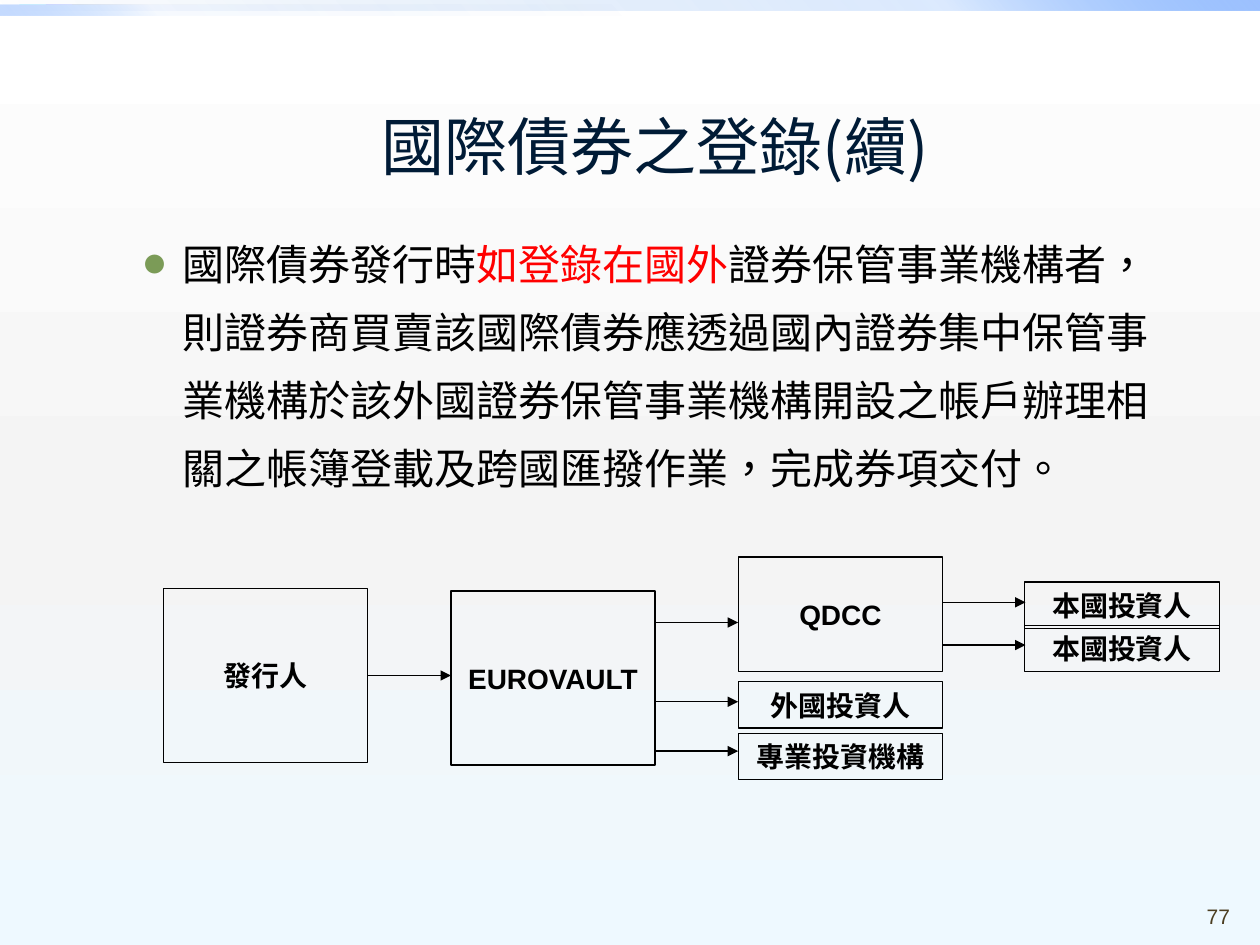
"""Build the slide on registering international bonds abroad."""
from typing import NamedTuple

from lxml import etree
from pptx import Presentation
from pptx.dml.color import RGBColor
from pptx.enum.shapes import MSO_CONNECTOR, MSO_SHAPE
from pptx.enum.text import MSO_ANCHOR, PP_ALIGN
from pptx.oxml.ns import qn
from pptx.util import Pt

CENTER = PP_ALIGN.CENTER
MIDDLE = MSO_ANCHOR.MIDDLE
BOTTOM = MSO_ANCHOR.BOTTOM
RECTANGLE = MSO_SHAPE.RECTANGLE
STRAIGHT = MSO_CONNECTOR.STRAIGHT

BLACK = RGBColor(0x00, 0x00, 0x00)
RED = RGBColor(0xFF, 0x00, 0x00)
NAVY = RGBColor(0x00, 0x1B, 0x36)
BROWN = RGBColor(0x4B, 0x3E, 0x21)
GREEN = RGBColor(0x7B, 0x9B, 0x57)
WHITE = RGBColor(0xFF, 0xFF, 0xFF)
PALE_GRAY = RGBColor(0xF4, 0xF4, 0xF4)
PALE_BLUE = RGBColor(0xEE, 0xF9, 0xFF)
DEEP_BLUE = RGBColor(0x00, 0x58, 0xB7)
MID_BLUE = RGBColor(0x4F, 0x95, 0xFF)
LIGHT_BLUE = RGBColor(0x9E, 0xC2, 0xFF)

LATIN = "Arial"
CJK = "Noto Sans CJK SC"


class Stop(NamedTuple):
    position: int
    color: RGBColor
    opacity: int = 100


class Band(NamedTuple):
    top: float
    width: float
    angle: int
    stops: tuple[Stop, ...]


class Party(NamedTuple):
    name: str
    left: float
    top: float
    width: float
    height: float


class Flow(NamedTuple):
    left: float
    y: float


COLUMNS = (93.6, 257.7, 421.9, 585.4)
PARTY_WIDTH = 116.6
INVESTOR_WIDTH = 111.6
MAIN_HEIGHT = 99.4
ROW_HEIGHT = 26.6
FLOW_LENGTH = 47.5

BACKGROUND = (Stop(0, WHITE), Stop(55, PALE_GRAY), Stop(100, PALE_BLUE))
BANDS = (
    Band(0, 720, 315, (Stop(0, DEEP_BLUE, 0), Stop(75, MID_BLUE, 20), Stop(100, LIGHT_BLUE))),
    Band(2.9, 360, 135, (Stop(0, DEEP_BLUE, 0), Stop(75, MID_BLUE, 5), Stop(100, LIGHT_BLUE, 60))),
)
PARTIES = (
    Party("發行人", COLUMNS[0], 336.2, PARTY_WIDTH, MAIN_HEIGHT),
    Party("EUROVAULT", COLUMNS[1], 337.7, PARTY_WIDTH, MAIN_HEIGHT),
    Party("QDCC", COLUMNS[2], 318.4, PARTY_WIDTH, 65.2),
    Party("外國投資人", COLUMNS[2], 389.5, PARTY_WIDTH, ROW_HEIGHT),
    Party("專業投資機構", COLUMNS[2], 419, PARTY_WIDTH, ROW_HEIGHT),
    Party("本國投資人", COLUMNS[3], 332.6, INVESTOR_WIDTH, ROW_HEIGHT),
    Party("本國投資人", COLUMNS[3], 357.3, INVESTOR_WIDTH, ROW_HEIGHT),
)
FLOWS = (
    Flow(210.2, 386),
    Flow(374.3, 355.7), Flow(374.3, 401), Flow(374.3, 429.2),
    Flow(538.5, 344.2), Flow(538.5, 368.6),
)
RULE_TEXT = (
    ("國際債券發行時", BLACK),
    ("如登錄在國外", RED),
    ("證券保管事業機構者，則證券商買賣該國際債券應透過國內證券集中保管事業機構於"
     "該外國證券保管事業機構開設之帳戶辦理相關之帳簿登載及跨國匯撥作業，完成券項交付。", BLACK),
)


def set_gradient(fill, owner, stops: tuple[Stop, ...], angle: int) -> None:
    """Fill the owner element with a linear gradient."""
    fill.gradient()
    gradient = next(owner.iter(qn("a:gradFill")))
    stop_list = gradient.find(qn("a:gsLst"))
    for old in list(stop_list):
        stop_list.remove(old)
    for stop in stops:
        mark = etree.SubElement(stop_list, qn("a:gs"), pos=str(stop.position * 1000))
        color = etree.SubElement(mark, qn("a:srgbClr"), val=str(stop.color))
        if stop.opacity < 100:
            etree.SubElement(color, qn("a:alpha"), val=str(stop.opacity * 1000))
    gradient.find(qn("a:lin")).set("ang", str(angle * 60000))


def style_run(run, size: float, color: RGBColor, typeface: str, bold: bool = False) -> None:
    """Set the look of a run, with the CJK face for its Chinese characters."""
    font = run.font
    font.size, font.bold, font.name = Pt(size), bold, typeface
    font.color.rgb = color
    properties = run._r.get_or_add_rPr()
    properties.set("lang", "zh-TW")
    etree.SubElement(properties, qn("a:ea"), typeface=CJK)


def write_centered(frame, text: str, size: float, color: RGBColor, typeface: str,
                   anchor=MIDDLE, bold: bool = False) -> None:
    """Write one centred line into a text frame."""
    frame.text = text
    frame.word_wrap = True
    frame.vertical_anchor = anchor
    line = frame.paragraphs[0]
    line.alignment = CENTER
    style_run(line.runs[0], size, color, typeface, bold)


def draw_band(slide, band: Band) -> None:
    """Draw a coloured band along the top edge."""
    bar = slide.shapes.add_shape(RECTANGLE, Pt(0), Pt(band.top), Pt(band.width), Pt(5.8))
    bar.shadow.inherit = False
    bar.line.fill.background()
    set_gradient(bar.fill, bar._element, band.stops, band.angle)


def draw_party(slide, party: Party) -> None:
    """Draw one party of the settlement chain."""
    box = slide.shapes.add_shape(RECTANGLE, Pt(party.left), Pt(party.top),
                                 Pt(party.width), Pt(party.height))
    box.shadow.inherit = False
    box.fill.background()
    box.line.color.rgb = BLACK
    box.line.width = Pt(0.75)
    frame = box.text_frame
    frame.margin_left = frame.margin_right = Pt(0)
    frame.margin_top = frame.margin_bottom = Pt(0)
    write_centered(frame, party.name, 16, BLACK, LATIN, bold=True)


def draw_flow(slide, flow: Flow) -> None:
    """Draw an arrow from one party to the next."""
    arrow = slide.shapes.add_connector(STRAIGHT, Pt(flow.left), Pt(flow.y),
                                       Pt(flow.left + FLOW_LENGTH), Pt(flow.y))
    arrow.line.color.rgb = BLACK
    arrow.line.width = Pt(0.75)
    etree.SubElement(arrow.line._get_or_add_ln(), qn("a:tailEnd"), type="triangle")
    etree.SubElement(arrow._element.spPr, qn("a:effectLst"))


def write_rule(slide) -> None:
    """Write the bulleted rule above the diagram."""
    rule = slide.shapes.add_textbox(Pt(48.2), Pt(122.4), Pt(618.5), Pt(164.2))
    rule.text_frame.word_wrap = True
    paragraph = rule.text_frame.paragraphs[0]
    paragraph.line_spacing = 1.35
    properties = paragraph._p.get_or_add_pPr()
    properties.set("marL", str(Pt(49)))
    properties.set("indent", str(-Pt(21.6)))
    bullet_color = etree.SubElement(properties, qn("a:buClr"))
    etree.SubElement(bullet_color, qn("a:srgbClr"), val=str(GREEN))
    etree.SubElement(properties, qn("a:buSzPct"), val="50000")
    etree.SubElement(properties, qn("a:buFont"), typeface=CJK)
    etree.SubElement(properties, qn("a:buChar"), char="●")
    for text, color in RULE_TEXT:
        run = paragraph.add_run()
        run.text = text
        style_run(run, 24, color, CJK)


def main() -> None:
    """Build and save the slide."""
    deck = Presentation()
    deck.slide_width, deck.slide_height = Pt(720), Pt(540)
    slide = deck.slides.add_slide(deck.slide_layouts[5])
    set_gradient(slide.background.fill, slide._element, BACKGROUND, 90)
    for band in BANDS:
        draw_band(slide, band)

    heading = slide.shapes.title
    heading.left, heading.top, heading.width, heading.height = Pt(50.4), Pt(55.4), Pt(648), Pt(55.4)
    write_centered(heading.text_frame, "國際債券之登錄(續)", 36, NAVY, CJK)
    write_rule(slide)

    for party in PARTIES:
        draw_party(slide, party)
    for flow in FLOWS:
        draw_flow(slide, flow)

    page_number = slide.shapes.add_textbox(Pt(678.2), Pt(496.8), Pt(36), Pt(37.4))
    write_centered(page_number.text_frame, "77", 12, BROWN, LATIN, BOTTOM)
    deck.save("out.pptx")


if __name__ == "__main__":
    main()
